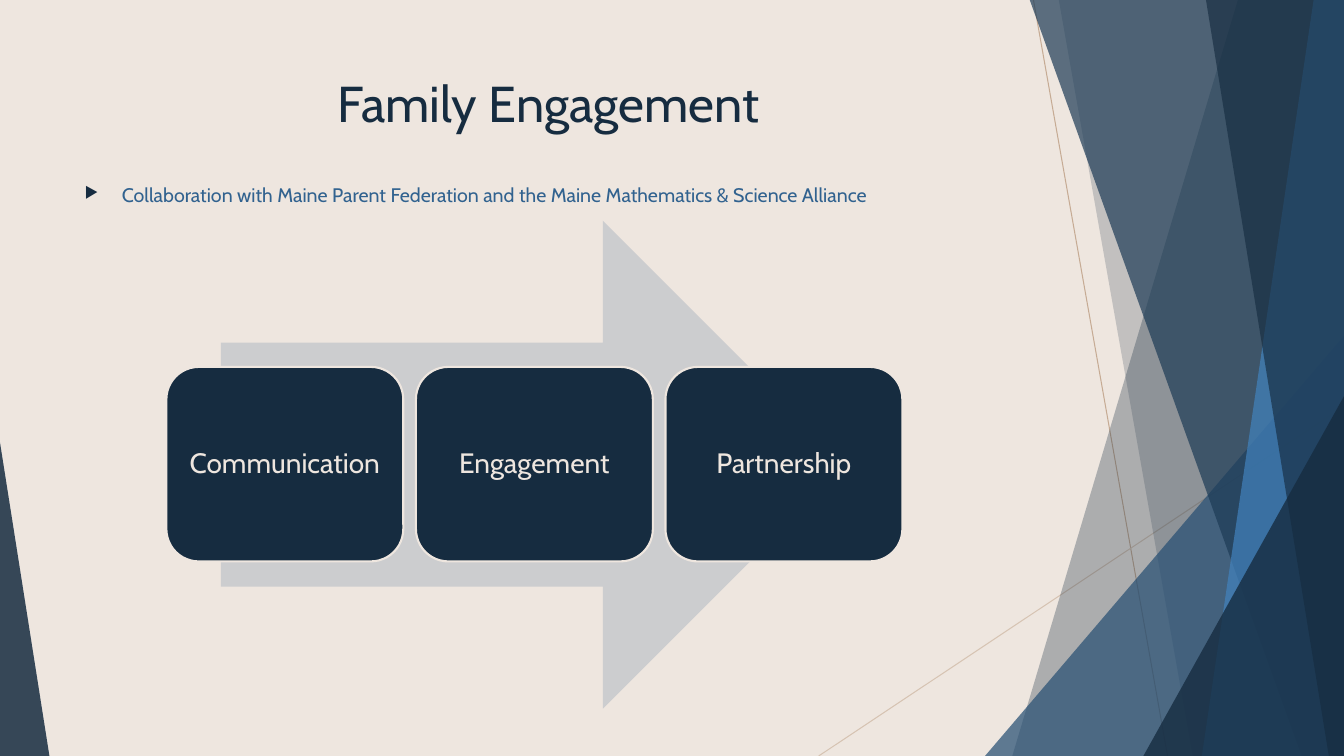
"""Build the Family Engagement slide."""
from dataclasses import dataclass

from lxml.etree import SubElement
from pptx import Presentation
from pptx.dml.color import RGBColor
from pptx.enum.shapes import MSO_CONNECTOR as Connector, MSO_SHAPE as Preset
from pptx.enum.text import MSO_ANCHOR as Anchor, PP_ALIGN as Align
from pptx.oxml.ns import qn
from pptx.util import Inches, Pt

FONT = "Cabin"
CREAM = RGBColor(0xEE, 0xE6, 0xDF)
NAVY = RGBColor(0x16, 0x2C, 0x40)
DEEP_BLUE = RGBColor(0x1D, 0x3B, 0x56)
MID_BLUE = RGBColor(0x27, 0x4F, 0x73)
BRIGHT_BLUE = RGBColor(0x42, 0x83, 0xBE)
TEXT_BLUE = RGBColor(0x31, 0x62, 0x8F)
ARROW_GRAY = RGBColor(0xCC, 0xCD, 0xCF)
TAN = RGBColor(0xC6, 0xAB, 0x94)
LIGHT_TAN = RGBColor(0xD6, 0xC3, 0xB2)

WIDTH, HEIGHT = 13.33, 7.5
FACET_TOP = -0.01


@dataclass(frozen=True)
class Ray:
    """A thin line across the background."""
    start: tuple[float, float]
    end: tuple[float, float]
    color: RGBColor


@dataclass(frozen=True)
class Facet:
    """A see-through panel from its top and bottom left corners to the right edge."""
    top_left: float
    bottom_left: float
    color: RGBColor
    opacity: int


@dataclass(frozen=True)
class Wedge:
    """A see-through triangle standing on the bottom edge."""
    left: float
    top: float
    width: float
    apex: float
    color: RGBColor
    opacity: int


RAYS = [
    Ray((10.25, 0), (11.58, HEIGHT), TAN),
    Ray((WIDTH, 4.03), (8.12, HEIGHT), LIGHT_TAN),
]
PANELS = [
    Facet(12.28, 10.04, NAVY, 30),
    Facet(10.5, 11.83, NAVY, 20),
    Wedge(9.77, 3.33, 3.56, 1, MID_BLUE, 72),
    Facet(10.21, 12.91, DEEP_BLUE, 70),
    Facet(13.03, 11.92, BRIGHT_BLUE, 70),
    Facet(11.96, 13.18, NAVY, 65),
    Wedge(11.34, 3.93, 1.99, 1, NAVY, 80),
    Wedge(0, 4.39, 0.49, 0, NAVY, 85),
]
STAGES = ["Communication", "Engagement", "Partnership"]
STAGE_LEFT, STAGE_PITCH = 1.65, 2.475


def paint(shape, color: RGBColor, opacity: int = 100) -> None:
    """Fill a shape without outline or shadow."""
    shape.shadow.inherit = False
    shape.fill.solid()
    shape.fill.fore_color.rgb = color
    shape.line.fill.background()
    if opacity < 100:
        tint = shape.fill._xPr.find(qn("a:solidFill"))[0]
        SubElement(tint, qn("a:alpha"), val=str(opacity * 1000))


def style(paragraph, size: float, color: RGBColor) -> None:
    """Set the font of every run in a paragraph."""
    for run in paragraph.runs:
        run.font.name = FONT
        run.font.size = Pt(size)
        run.font.color.rgb = color


def draw_ray(slide, ray: Ray) -> None:
    """Draw one background line."""
    line = slide.shapes.add_connector(
        Connector.STRAIGHT, *map(Inches, ray.start + ray.end))
    line.line.color.rgb = ray.color
    line.line.width = Pt(0.75)
    SubElement(line._element.spPr, qn("a:effectLst"))


def draw_panel(slide, panel: Facet | Wedge) -> None:
    """Draw one background panel."""
    if isinstance(panel, Wedge):
        shape = slide.shapes.add_shape(
            Preset.ISOSCELES_TRIANGLE, Inches(panel.left), Inches(panel.top),
            Inches(panel.width), Inches(HEIGHT - panel.top))
        shape.adjustments[0] = panel.apex
    else:
        corners = [(WIDTH, FACET_TOP), (WIDTH, HEIGHT), (panel.bottom_left, HEIGHT)]
        outline = slide.shapes.build_freeform(Inches(panel.top_left), Inches(FACET_TOP))
        outline.add_line_segments([(Inches(x), Inches(y)) for x, y in corners])
        shape = outline.convert_to_shape()
    paint(shape, panel.color, panel.opacity)


def add_text(slide, text: str, top: float, height: float):
    """Add a text box in the main column and return its paragraph."""
    frame = slide.shapes.add_textbox(
        Inches(0.74), Inches(top), Inches(9.4), Inches(height)).text_frame
    frame.word_wrap = True
    frame.text = text
    return frame.paragraphs[0]


def add_bullet(paragraph) -> None:
    """Give a paragraph a navy triangle bullet with a hanging indent."""
    props = paragraph._p.get_or_add_pPr()
    props.set("marL", str(Inches(0.37)))
    props.set("indent", str(Inches(-0.37)))
    SubElement(SubElement(props, qn("a:buClr")), qn("a:srgbClr"), val=str(NAVY))
    SubElement(props, qn("a:buSzPct"), val="80000")
    SubElement(props, qn("a:buChar"), char="▶")


def draw_stage(slide, label: str, left: float) -> None:
    """Draw one labelled stage of the process."""
    stage = slide.shapes.add_shape(
        Preset.ROUNDED_RECTANGLE, Inches(left), Inches(3.64), Inches(2.35), Inches(1.93))
    paint(stage, NAVY)
    stage.line.color.rgb = CREAM
    stage.line.width = Pt(1.5)
    frame = stage.text_frame
    frame.word_wrap = True
    frame.vertical_anchor = Anchor.MIDDLE
    frame.margin_left = frame.margin_right = Inches(0.08)
    frame.margin_top = frame.margin_bottom = Inches(0.08)
    frame.text = label
    paragraph = frame.paragraphs[0]
    paragraph.alignment = Align.CENTER
    paragraph.line_spacing = 0.9
    style(paragraph, 20, CREAM)


def main() -> None:
    """Create and save the slide."""
    deck = Presentation()
    deck.slide_width, deck.slide_height = Inches(WIDTH), Inches(HEIGHT)
    slide = deck.slides.add_slide(deck.slide_layouts[6])
    slide.background.fill.solid()
    slide.background.fill.fore_color.rgb = CREAM

    for ray in RAYS:
        draw_ray(slide, ray)
    for panel in PANELS:
        draw_panel(slide, panel)

    title = add_text(slide, "Family Engagement", 0.67, 0.87)
    title.alignment = Align.CENTER
    style(title, 36, NAVY)

    partners = add_text(
        slide,
        "Collaboration with Maine Parent Federation and the Maine Mathematics & Science Alliance",
        1.77, 4.84)
    add_bullet(partners)
    style(partners, 14, TEXT_BLUE)

    progress = slide.shapes.add_shape(
        Preset.RIGHT_ARROW, Inches(2.19), Inches(2.19), Inches(6.21), Inches(4.84))
    paint(progress, ARROW_GRAY)
    for index, label in enumerate(STAGES):
        draw_stage(slide, label, STAGE_LEFT + index * STAGE_PITCH)

    deck.save("out.pptx")


if __name__ == "__main__":
    main()
